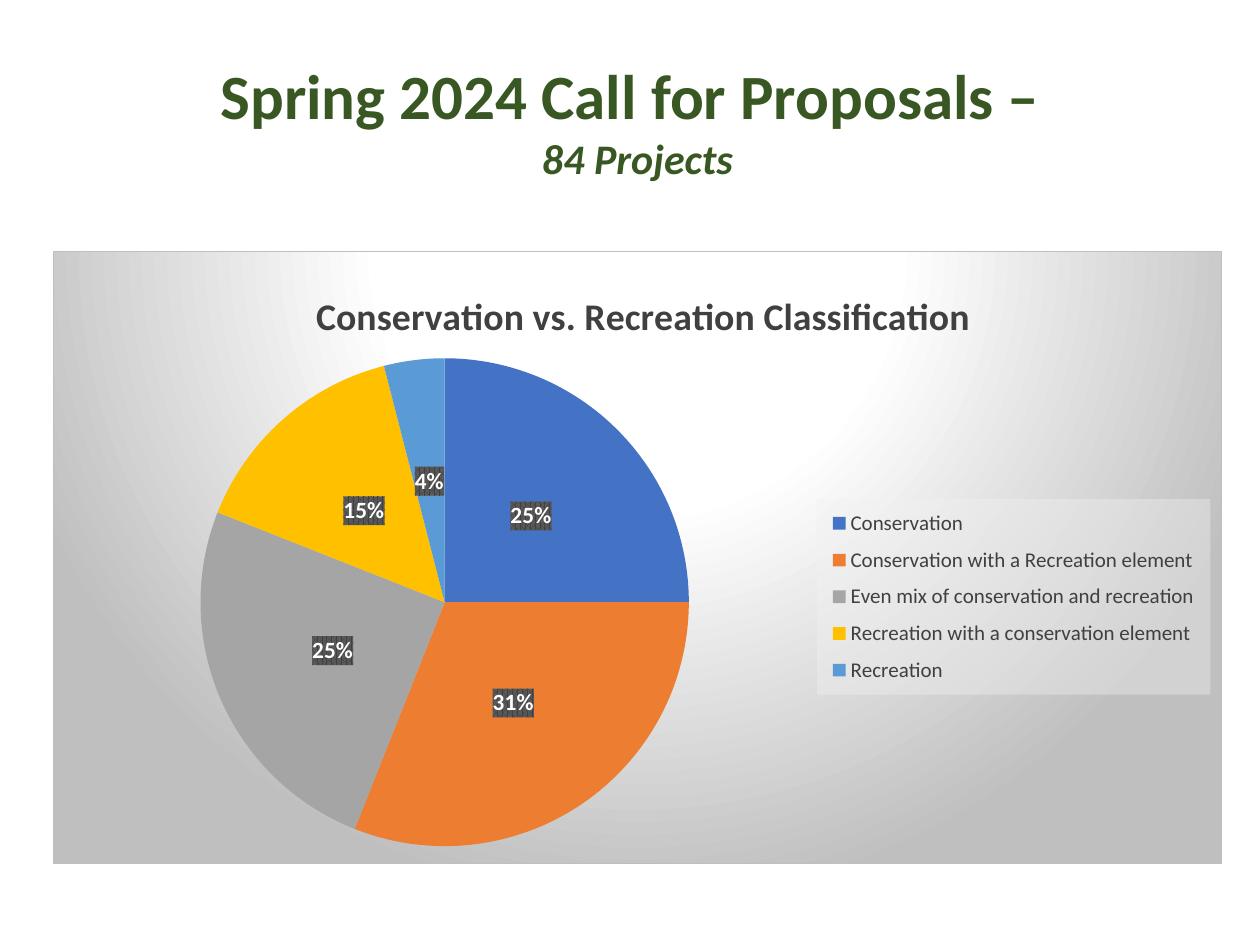
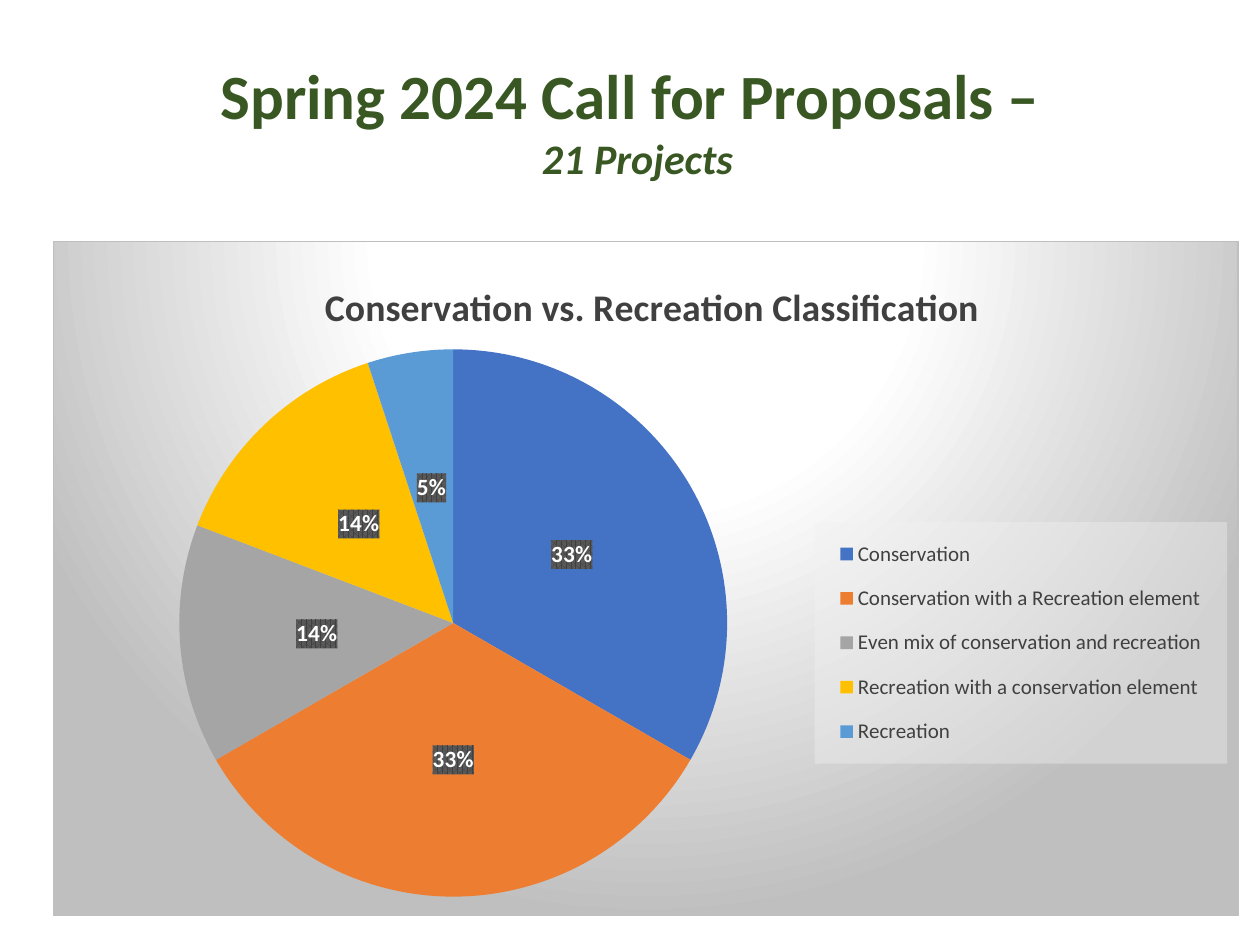
from dataclasses import dataclass
from typing import Any

from lxml import etree
from pptx import Presentation
from pptx.chart.chart import Chart
from pptx.chart.data import CategoryChartData
from pptx.dml.color import RGBColor
from pptx.enum.chart import XL_CHART_TYPE, XL_LABEL_POSITION, XL_LEGEND_POSITION
from pptx.enum.text import MSO_ANCHOR, MSO_AUTO_SIZE, PP_ALIGN
from pptx.util import Pt

PIE = XL_CHART_TYPE.PIE
LABEL_CENTER = XL_LABEL_POSITION.CENTER
LEGEND_RIGHT = XL_LEGEND_POSITION.RIGHT
TOP = MSO_ANCHOR.TOP
GROW = MSO_AUTO_SIZE.SHAPE_TO_FIT_TEXT
CENTER = PP_ALIGN.CENTER
TITLE_ONLY = 5

FONT = "Calibri"
COLORS = {
    "heading": "385723", "text": "404040", "black": "000000", "white": "FFFFFF",
    "edge": "BFBFBF", "legend": "F2F2F2", "label": "404040", "label_back": "595959",
}
CATEGORIES = {
    "Conservation": "4472C4",
    "Conservation with a Recreation element": "ED7D31",
    "Even mix of conservation and recreation": "A5A5A5",
    "Recreation with a conservation element": "FFC000",
    "Recreation": "5B9BD5",
}
HEADING = "Spring 2024 Call for Proposals – "
CHART_TITLE = "Conservation vs. Recreation Classification"

CHART_NS = "http://schemas.openxmlformats.org/drawingml/2006/chart"
DRAWING_NS = "http://schemas.openxmlformats.org/drawingml/2006/main"
NAMESPACES = f'xmlns:c="{CHART_NS}" xmlns:a="{DRAWING_NS}"'


@dataclass(frozen=True)
class Frame:
    """A rectangle on the slide, in points."""
    left: float
    top: float
    width: float
    height: float


@dataclass(frozen=True)
class ClassificationPage:
    subtitle: str
    shares: tuple[int, ...]
    chart: Frame
    pie: Frame
    legend: Frame
    title_left: float
    title_top: float


TITLE_FRAME = Frame(30.24, 28.8, 668.16, 79.92)
PAGES = (
    ClassificationPage(
        "84 Projects", (25, 31, 25, 15, 4),
        chart=Frame(30.24, 143.28, 668.16, 350.64),
        pie=Frame(114.3, 204.5, 279.4, 279.4),
        legend=Frame(466.9, 285.1, 225.1, 112),
        title_left=176.5, title_top=161),
    ClassificationPage(
        "21 Projects", (33, 33, 14, 14, 5),
        chart=Frame(30.24, 137.52, 677.52, 385.92),
        pie=Frame(102.2, 199.4, 313.4, 313.4),
        legend=Frame(465.6, 298.3, 236, 138.3),
        title_left=181.5, title_top=156),
)


def color(name: str) -> str:
    return f'<a:srgbClr val="{COLORS[name]}"/>'


# Fills of the chart area, the legend and the data labels
CHART_FILL = (
    '<a:gradFill><a:gsLst>'
    f'<a:gs pos="0">{color("white")}</a:gs><a:gs pos="39000">{color("white")}</a:gs>'
    f'<a:gs pos="100000">{color("edge")}</a:gs></a:gsLst>'
    '<a:path path="circle"><a:fillToRect l="50000" t="-80000" r="50000" b="180000"/></a:path>'
    f'</a:gradFill><a:ln w="9525"><a:solidFill>{color("edge")}</a:solidFill></a:ln>'
)
LEGEND_FILL = (
    f'<a:solidFill><a:srgbClr val="{COLORS["legend"]}"><a:alpha val="39000"/></a:srgbClr>'
    '</a:solidFill><a:ln><a:noFill/></a:ln>'
)
LABEL_FILL = (
    f'<a:pattFill prst="pct75"><a:fgClr>{color("label")}</a:fgClr>'
    f'<a:bgClr>{color("label_back")}</a:bgClr></a:pattFill><a:ln><a:noFill/></a:ln>'
)


def format_font(font: Any, color_name: str, **values: Any) -> None:
    font.color.rgb = RGBColor.from_string(COLORS[color_name])
    for name, value in {"name": FONT, **values}.items():
        setattr(font, name, value)


def set_chart_part_fill(chart: Chart, part: str, fill: str) -> None:
    """Put shape properties just before the part's text properties."""
    text_properties = chart.element.xpath(f"{part}/c:txPr")[0]
    text_properties.addprevious(
        etree.fromstring(f"<c:spPr {NAMESPACES}>{fill}</c:spPr>"))


def set_chart_part_layout(chart: Chart, part: str, whole: Frame, left: float, top: float,
                          size: tuple[float, float] | None = None) -> None:
    """Place a chart part at a slide position, as fractions of the chart frame."""
    values = {"xMode": "edge", "yMode": "edge",
              "x": (left - whole.left) / whole.width,
              "y": (top - whole.top) / whole.height}
    if size:
        values |= {"w": size[0] / whole.width, "h": size[1] / whole.height}
    target = "<c:layoutTarget val=\"inner\"/>" if part == "plotArea" else ""
    entries = "".join(f'<c:{name} val="{value}"/>' for name, value in values.items())
    layout = etree.fromstring(
        f"<c:layout {NAMESPACES}><c:manualLayout>{target}{entries}</c:manualLayout></c:layout>")
    element = chart.element.xpath(f"c:chart/c:{part}")[0]
    for old in element.xpath("c:layout"):
        element.remove(old)
    overlay = element.xpath("c:overlay")
    if overlay:
        overlay[0].addprevious(layout)
    else:
        element.insert(0, layout)


def add_heading(slide: Any, subtitle: str) -> None:
    box = slide.shapes.title
    for name in ("left", "top", "width", "height"):
        setattr(box, name, Pt(getattr(TITLE_FRAME, name)))
    frame = box.text_frame
    for name, value in {"word_wrap": True, "auto_size": GROW, "vertical_anchor": TOP}.items():
        setattr(frame, name, value)
    lines = ((HEADING, 36, False), (subtitle, 24, True))
    for index, (text, size, italic) in enumerate(lines):
        para = frame.add_paragraph() if index else frame.paragraphs[0]
        para.alignment = CENTER
        span = para.add_run()
        span.text = text
        format_font(span.font, "heading", size=Pt(size), bold=True, italic=italic)


def add_classification_chart(slide: Any, page: ClassificationPage) -> None:
    data = CategoryChartData()
    data.categories = list(CATEGORIES)
    data.add_series("Series 1", page.shares)
    area = page.chart
    chart = slide.shapes.add_chart(
        PIE, Pt(area.left), Pt(area.top), Pt(area.width), Pt(area.height), data).chart
    format_font(chart.font, "black", size=Pt(10))

    # Chart title
    chart.has_title = True
    span = chart.chart_title.text_frame.paragraphs[0].add_run()
    span.text = CHART_TITLE
    format_font(span.font, "text", size=Pt(21.6), bold=True)

    # Legend
    chart.has_legend = True
    legend = chart.legend
    legend.position = LEGEND_RIGHT
    legend.include_in_layout = False
    format_font(legend.font, "text", size=Pt(12))

    # Slices and percentages
    plot = chart.plots[0]
    plot.vary_by_categories = True
    series = plot.series[0]
    for index, slice_color in enumerate(CATEGORIES.values()):
        point_format = series.points[index].format
        point_format.fill.solid()
        point_format.fill.fore_color.rgb = RGBColor.from_string(slice_color)
        point_format.line.fill.background()
    labels = series.data_labels
    format_font(labels.font, "white", size=Pt(13.3), bold=True)
    label_values = {
        "show_percentage": True, "show_value": False, "position": LABEL_CENTER,
        "number_format": "0%", "number_format_is_linked": False,
    }
    for name, value in label_values.items():
        setattr(labels, name, value)

    # Backgrounds and positions
    set_chart_part_fill(chart, ".", CHART_FILL)
    set_chart_part_fill(chart, "c:chart/c:legend", LEGEND_FILL)
    set_chart_part_fill(chart, ".//c:ser/c:dLbls", LABEL_FILL)
    set_chart_part_layout(chart, "title", area, page.title_left, page.title_top)
    for part, frame in (("plotArea", page.pie), ("legend", page.legend)):
        set_chart_part_layout(chart, part, area, frame.left, frame.top,
                              (frame.width, frame.height))


def main() -> None:
    deck = Presentation()
    deck.slide_width, deck.slide_height = Pt(720), Pt(540)
    for page in PAGES:
        slide = deck.slides.add_slide(deck.slide_layouts[TITLE_ONLY])
        add_heading(slide, page.subtitle)
        add_classification_chart(slide, page)
    deck.save("out.pptx")


if __name__ == "__main__":
    main()
